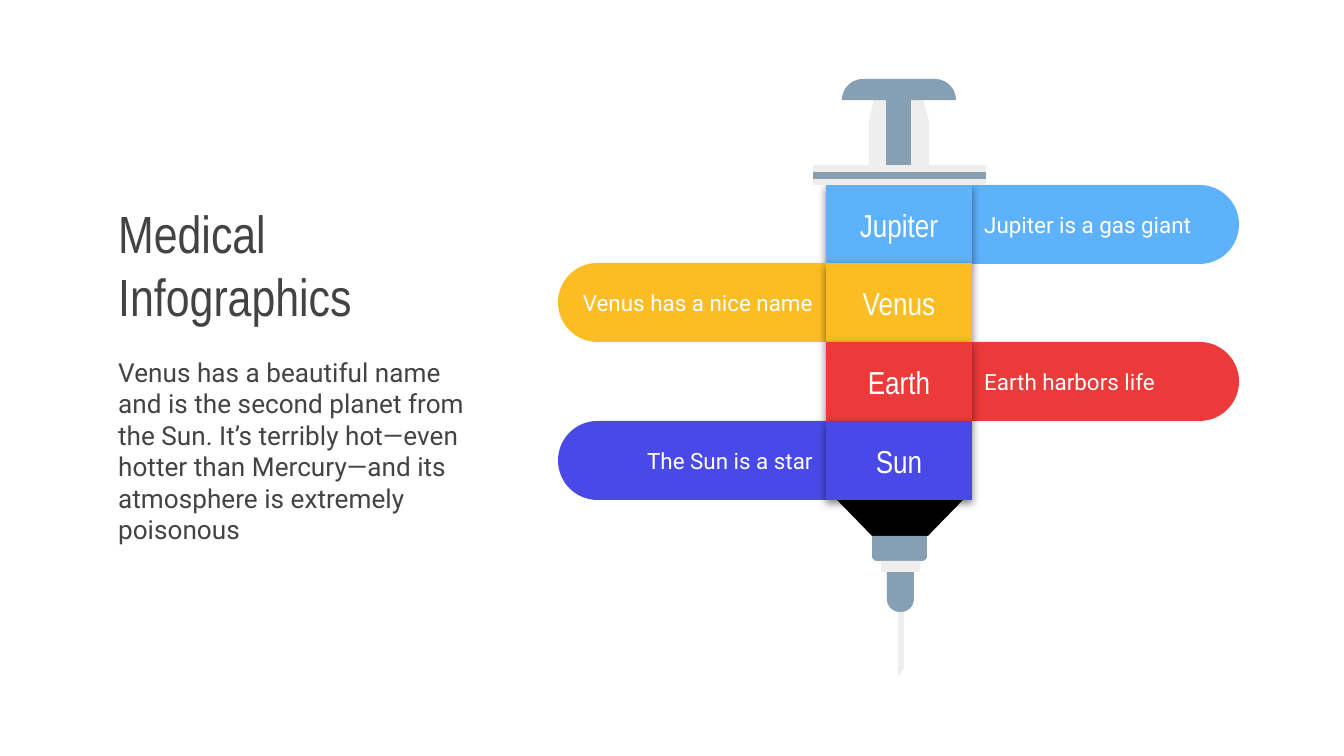
from math import cos, pi, sin

from lxml.etree import SubElement
from pptx import Presentation
from pptx.dml.color import RGBColor
from pptx.enum.text import MSO_ANCHOR, PP_ALIGN
from pptx.oxml.ns import qn
from pptx.util import Pt

SCALE = 9144000 / 1344
GREY, PALE, BLACK, WHITE, INK = "869FB2", "EEEEEE", "000000", "FFFFFF", "434343"
HEAD, BODY = "Arial Narrow", "Roboto"
ROWS = [
    ("Jupiter", "Jupiter is a gas giant", "5EB2FC"),
    ("Venus", "Venus has a nice name", "FCBD24"),
    ("Earth", "Earth harbors life", "EC3A3B"),
    ("Sun", "The Sun is a star", "4949E7"),
]


def px(n):
    """Turn px into EMU."""
    return round(n * SCALE)


def paint(color, code):
    """Set a fill or font colour from a hex string."""
    color.rgb = RGBColor.from_string(code)


def write(shape, text, size=12, font=BODY, code=WHITE,
          align=PP_ALIGN.LEFT, anchor=MSO_ANCHOR.MIDDLE):
    """Put formatted text in a shape."""
    frame = shape.text_frame
    frame.word_wrap = True
    frame.vertical_anchor = anchor
    frame.margin_left = frame.margin_right = Pt(7.2)
    frame.margin_top = frame.margin_bottom = Pt(7.2)
    para = frame.paragraphs[0]
    para.alignment = align
    run = para.add_run()
    run.text = text
    run.font.size = Pt(size)
    run.font.name = font
    paint(run.font.color, code)


def form(slide, x, y, points, code):
    """Draw a closed outline whose points are relative to x, y."""
    spots = [(px(x + a), px(y + b)) for a, b in points]
    pen = slide.shapes.build_freeform(*spots[0], scale=1.0)
    pen.add_line_segments(spots[1:], close=True)
    shape = pen.convert_to_shape()
    shape.shadow.inherit = False
    shape.fill.solid()
    paint(shape.fill.fore_color, code)
    shape.line.fill.background()
    return shape


def block(slide, x, y, w, h, code, radii=(0, 0, 0, 0)):
    """Draw a box with a radius for each corner, clockwise from top left."""
    points = []
    corners = [(0, 0), (w, 0), (w, h), (0, h)]
    for k, ((a, b), r) in enumerate(zip(corners, radii)):
        mid = (a + (r if a == 0 else -r), b + (r if b == 0 else -r))
        steps = 16 if r else 0
        for n in range(steps + 1):
            turn = pi + (k + n / max(steps, 1)) * pi / 2
            points.append((mid[0] + r * cos(turn), mid[1] + r * sin(turn)))
    return form(slide, x, y, points, code)


def shade(shape):
    """Give a shape a soft shadow below it."""
    list_ = shape._element.spPr.find(qn("a:effectLst"))
    outer = SubElement(list_, qn("a:outerShdw"), blurRad="57150",
                       dist="19050", dir="5400000", algn="bl", rotWithShape="0")
    tint = SubElement(outer, qn("a:srgbClr"), val=BLACK)
    SubElement(tint, qn("a:alpha"), val="50000")


def needle(slide, x, y, w):
    """Draw the needle end, centred under a barrel of width w."""
    mid = x + w // 2
    form(slide, mid - 1, y + 30, [(0, 0), (6, 0), (6, 138), (0, 147)], PALE)
    form(slide, x + 11, y, [(0, 0), (126, 0), (91, 36), (35, 36)], BLACK)
    block(slide, mid - 12, y + 71, 27, 41, GREY, (0, 0, 13, 13))
    block(slide, mid - 27, y + 36, 55, 25, GREY, (0, 0, 5, 5))
    block(slide, mid - 18, y + 61, 39, 11, PALE, (0, 0, 2, 2))


def row(slide, x, y, w, h, item, right):
    """Draw a barrel cell and its wing on one side."""
    name, note, code = item
    reach, r = 268, h / 2
    if right:
        wing = block(slide, x + w - 1, y, reach, h, code, (0, r, r, 0))
    else:
        wing = block(slide, x - reach, y, reach, h, code, (r, 0, 0, r))
    write(wing, note, align=PP_ALIGN.LEFT if right else PP_ALIGN.RIGHT)
    cell = block(slide, x, y, w, h, code)
    shade(cell)
    write(cell, name, size=17, font=HEAD, align=PP_ALIGN.CENTER)


def barrel(slide, x, y, w, h):
    """Stack the rows with wings on alternate sides."""
    count = len(ROWS)
    for k, item in enumerate(ROWS):
        row(slide, x, y + k * h // count, w, 79, item, k % 2 == 0)


def plunger(slide, x, y, w):
    """Draw the flange, rod and cap."""
    block(slide, x, y + 86, w, 20, PALE)
    form(slide, x + 98, y + 20, [(0, 0), (12, 0), (18, 22), (18, 66), (0, 66)], PALE)
    form(slide, x + 56, y + 20, [(5, 0), (17, 0), (17, 66), (0, 66), (0, 22)], PALE)
    block(slide, x + 73, y + 20, 25, 66, GREY)
    block(slide, x, y + 93, w, 7, GREY)
    block(slide, x + 29, y, 114, 21, GREY, (21, 21, 0, 0))


def label(slide, x, y, w, h, text, **form):
    """Add a text box."""
    box = slide.shapes.add_textbox(px(x), px(y), px(w), px(h))
    write(box, text, code=INK, **form)


def intro(slide, x, y):
    """Place the title and the text under it."""
    label(slide, x, y, 366, 125, "Medical Infographics", size=28, font=HEAD)
    label(slide, x, y + 141, 387, 212,
          "Venus has a beautiful name and is the second planet from the Sun. "
          "It’s terribly hot—even hotter than Mercury—and its atmosphere is "
          "extremely poisonous", size=14, anchor=MSO_ANCHOR.TOP)


def main():
    """Build and save the slide."""
    deck = Presentation()
    deck.slide_width, deck.slide_height = px(1344), px(756)
    slide = deck.slides.add_slide(deck.slide_layouts[6])
    needle(slide, 826, 500, 146)
    barrel(slide, 826, 185, 146, 315)
    plunger(slide, 813, 79, 173)
    intro(slide, 105, 202)
    deck.save("out.pptx")


if __name__ == "__main__":
    main()
